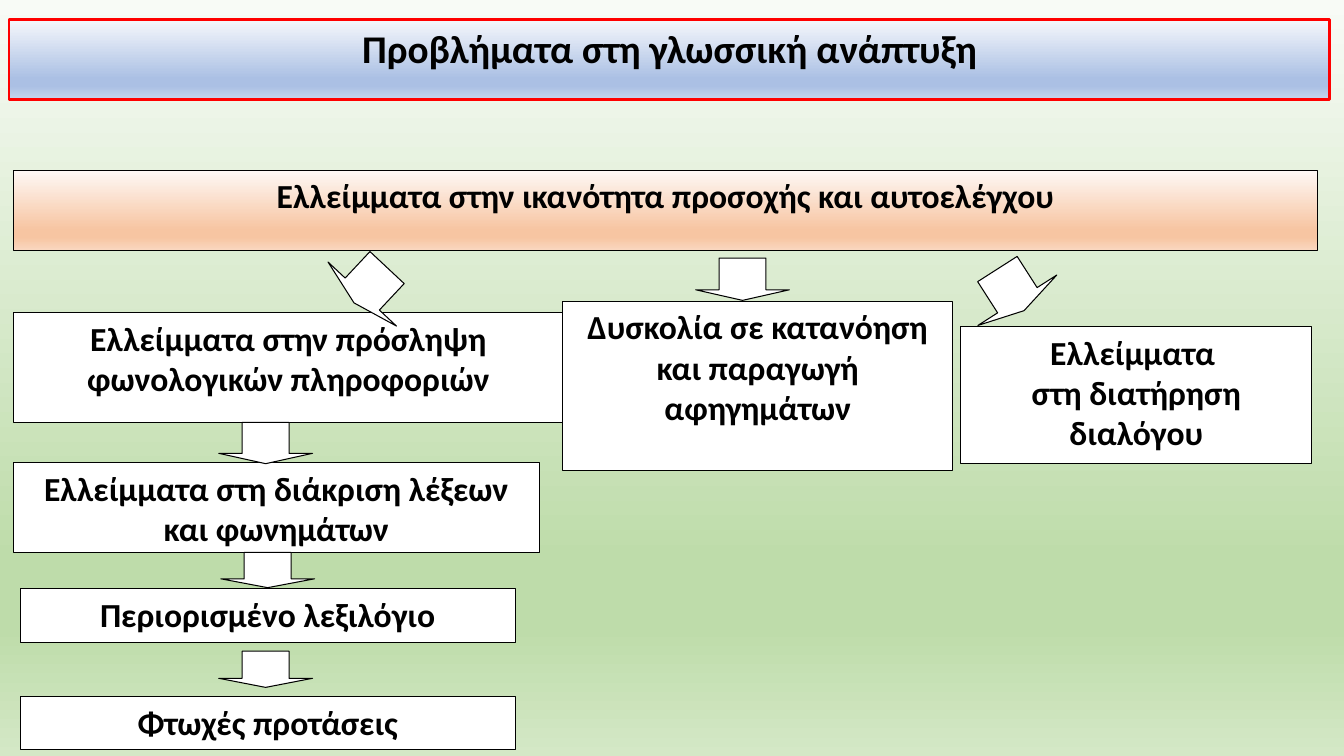
import dataclasses
import typing

import lxml.etree
import pptx
import pptx.dml.color
import pptx.dml.fill
import pptx.enum.shapes
import pptx.enum.text
import pptx.oxml.ns
import pptx.shapes.autoshape
import pptx.slide
import pptx.util

Inches = pptx.util.Inches
RGBColor = pptx.dml.color.RGBColor
Shape = pptx.shapes.autoshape.Shape
Slide = pptx.slide.Slide
ShapeType = pptx.enum.shapes.MSO_SHAPE
Gradient = tuple[RGBColor, RGBColor, RGBColor]

BLACK = RGBColor(0x00, 0x00, 0x00)
WHITE = RGBColor(0xFF, 0xFF, 0xFF)
RED = RGBColor(0xFF, 0x00, 0x00)
GREEN_GRADIENT: Gradient = (
    RGBColor(0xF8, 0xFB, 0xF6), RGBColor(0xBE, 0xDC, 0xAA), RGBColor(0xD4, 0xE8, 0xC6))
ORANGE_GRADIENT: Gradient = (
    RGBColor(0xFE, 0xF8, 0xF5), RGBColor(0xF7, 0xC5, 0xA2), RGBColor(0xFA, 0xD8, 0xC1))
BLUE_GRADIENT: Gradient = (
    RGBColor(0xF6, 0xF8, 0xFC), RGBColor(0xAB, 0xC0, 0xE4), RGBColor(0xC7, 0xD5, 0xED))

FONT_NAME = "Calibri"
ARROW_WIDTH = 0.93


@dataclasses.dataclass(frozen=True)
class Box:
    text: str
    left: float
    top: float
    width: float
    height: float
    gradient: typing.Optional[Gradient] = None
    line_color: RGBColor = BLACK
    line_width: float = 0.75
    font_size: int = 24


@dataclasses.dataclass(frozen=True)
class Arrow:
    left: float
    top: float
    height: float
    rotation: float = 0


BOXES = [
    Box("Ελλείμματα στην ικανότητα προσοχής και αυτοελέγχου",
        0.13, 1.69, 12.94, 0.8, ORANGE_GRADIENT),
    Box("Ελλείμματα στην πρόσληψη φωνολογικών πληροφοριών", 0.13, 3.1, 5.46, 1.09),
    Box("Δυσκολία σε κατανόηση και παραγωγή αφηγημάτων", 5.58, 2.99, 3.87, 1.68),
    Box("Ελλείμματα \nστη διατήρηση διαλόγου", 9.53, 3.24, 3.48, 1.36),
    Box("Ελλείμματα στη διάκριση λέξεων και φωνημάτων", 0.13, 4.59, 5.22, 0.89),
    Box("Περιορισμένο λεξιλόγιο", 0.2, 5.84, 4.91, 0.53),
    Box("Φτωχές προτάσεις", 0.2, 6.91, 4.91, 0.53),
    Box("Προβλήματα στη γλωσσική ανάπτυξη",
        0.09, 0.19, 13.1, 0.8, BLUE_GRADIENT, RED, 2, 28),
]

ARROWS = [
    Arrow(6.9, 2.56, 0.42),
    Arrow(3.21, 2.59, 0.48, 43.1),
    Arrow(9.56, 2.63, 0.49, 327.4),
    Arrow(2.17, 4.19, 0.41),
    Arrow(2.19, 5.48, 0.35),
    Arrow(2.17, 6.46, 0.36),
]


def apply_gradient(fill: pptx.dml.fill.FillFormat,
                   element: lxml.etree.ElementBase, gradient: Gradient) -> None:
    qn = pptx.oxml.ns.qn
    fill.gradient()
    fill.gradient_angle = 270
    stop_list = next(element.iter(qn("a:gsLst")))
    for stop in list(stop_list):
        stop_list.remove(stop)
    start, middle, end = gradient
    for percent, color in ((0, start), (74, middle), (83, middle), (100, end)):
        stop = lxml.etree.SubElement(stop_list, qn("a:gs"), pos=str(percent * 1000))
        lxml.etree.SubElement(stop, qn("a:srgbClr"), val=str(color))


def add_outlined_shape(slide: Slide, shape_type: ShapeType, left: float, top: float,
                       width: float, height: float, line_color: RGBColor = BLACK,
                       line_width: float = 0.75) -> Shape:
    shape = slide.shapes.add_shape(
        shape_type, Inches(left), Inches(top), Inches(width), Inches(height))
    shape.shadow.inherit = False
    shape.fill.solid()
    shape.fill.fore_color.rgb = WHITE
    shape.line.color.rgb = line_color
    shape.line.width = pptx.util.Pt(line_width)
    return shape


def draw_box(slide: Slide, box: Box) -> None:
    shape = add_outlined_shape(slide, ShapeType.RECTANGLE, box.left, box.top,
                               box.width, box.height, box.line_color, box.line_width)
    if box.gradient:
        apply_gradient(shape.fill, shape.element, box.gradient)
    text_frame = shape.text_frame
    text_frame.text = box.text
    text_frame.word_wrap = True
    text_frame.vertical_anchor = pptx.enum.text.MSO_ANCHOR.TOP
    for paragraph in text_frame.paragraphs:
        paragraph.alignment = pptx.enum.text.PP_ALIGN.CENTER
        for run in paragraph.runs:
            run.font.name = FONT_NAME
            run.font.size = pptx.util.Pt(box.font_size)
            run.font.bold = True
            run.font.color.rgb = BLACK


def draw_arrow(slide: Slide, arrow: Arrow) -> None:
    shape = add_outlined_shape(slide, ShapeType.DOWN_ARROW, arrow.left, arrow.top,
                               ARROW_WIDTH, arrow.height)
    shape.adjustments[0] = 0.5
    shape.adjustments[1] = 0.25
    shape.rotation = arrow.rotation


def main() -> None:
    presentation = pptx.Presentation()
    presentation.slide_width = Inches(13.33)
    presentation.slide_height = Inches(7.5)
    slide = presentation.slides.add_slide(presentation.slide_layouts[6])
    apply_gradient(slide.background.fill, slide.element, GREEN_GRADIENT)
    for box in BOXES:
        draw_box(slide, box)
    for arrow in ARROWS:
        draw_arrow(slide, arrow)
    presentation.save("out.pptx")


if __name__ == "__main__":
    main()
